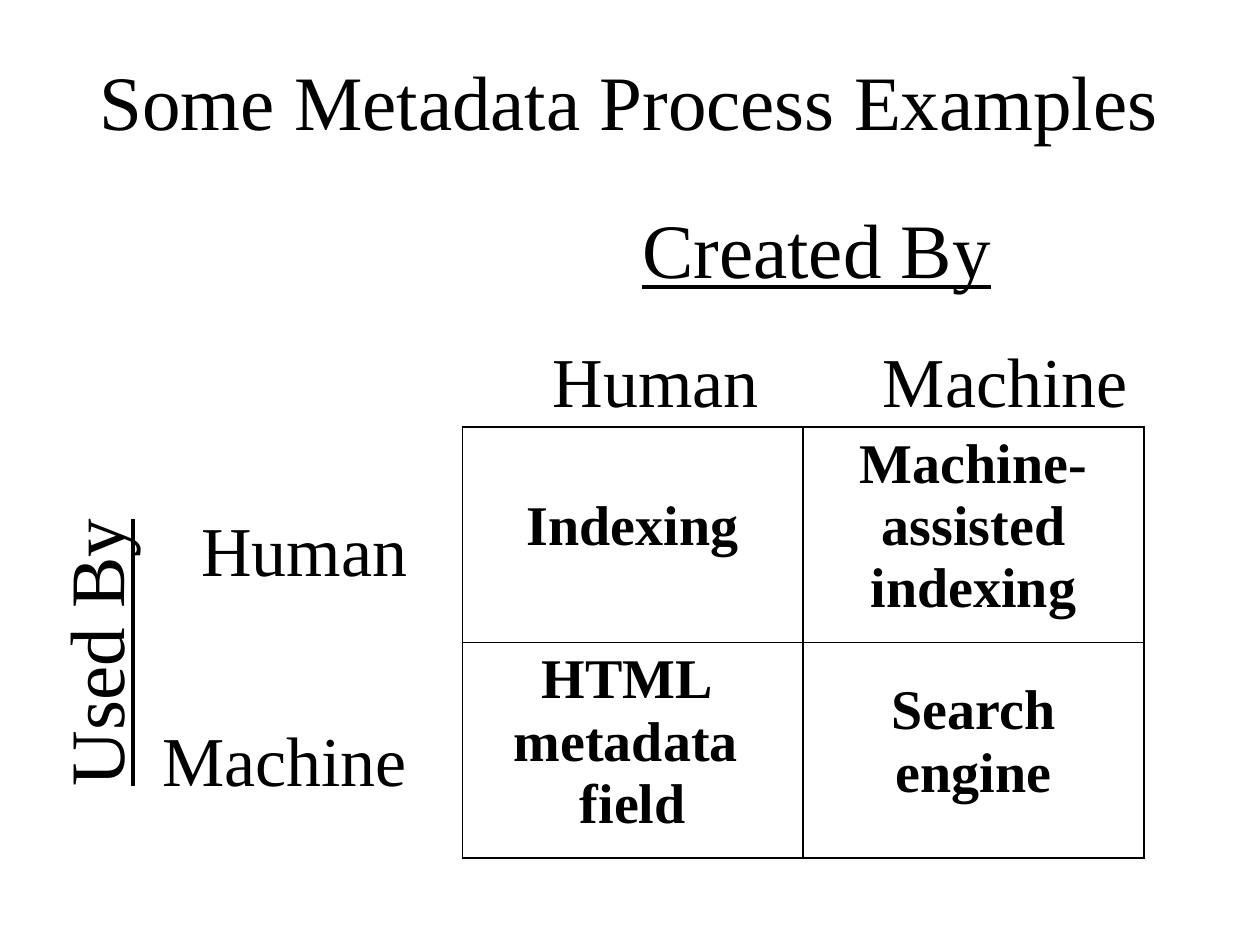
from dataclasses import dataclass

from lxml import etree
from pptx import Presentation
from pptx.dml.color import RGBColor
from pptx.enum.text import MSO_ANCHOR, MSO_AUTO_SIZE, PP_ALIGN
from pptx.oxml.ns import qn
from pptx.util import Emu, Inches, Pt

CENTER, LEFT = PP_ALIGN.CENTER, PP_ALIGN.LEFT
TOP, MIDDLE = MSO_ANCHOR.TOP, MSO_ANCHOR.MIDDLE
FIT_SHAPE = MSO_AUTO_SIZE.SHAPE_TO_FIT_TEXT

SLIDE_WIDTH, SLIDE_HEIGHT = Inches(10), Inches(7.5)
FONT, BLACK, WHITE = "Times New Roman", "000000", "FFFFFF"
HEADING_SIZE, LABEL_SIZE, CELL_SIZE = 44, 40, 32
HEADING_HEIGHT, LABEL_HEIGHT = 11.2, 10.27
HUMAN_WIDTH, MACHINE_WIDTH = 18.5, 21.7
COLUMN_LABEL_TOP = 35.07
MATRIX_LEFT, MATRIX_TOP = 36.7, 45.2
COLUMN_WIDTH, ROW_HEIGHT = 27.05, 22.8
BORDER_WIDTH = Pt(1)


@dataclass(frozen=True)
class Label:
    """Text with its place in percent of the slide's width and height."""
    text: str
    left: float
    top: float
    width: float
    height: float = LABEL_HEIGHT
    size: int = LABEL_SIZE
    underline: bool = False
    rotation: int = 0


@dataclass(frozen=True)
class Example:
    """Paragraphs of a matrix cell, starting some lines below its top."""
    lines: tuple[str, ...]
    lines_down: float = 0


TITLE = Label("Some Metadata Process Examples", 5.8, 2.27, 88.3, 16.67, HEADING_SIZE)
AXIS_LABELS = (
    Label("Created By", 50, 20.67, 29.9, HEADING_HEIGHT, HEADING_SIZE, True),
    Label("Used By", -4.2, 63.33, 23.4, HEADING_HEIGHT, HEADING_SIZE, True, 270),
    Label("Human", 42.9, COLUMN_LABEL_TOP, HUMAN_WIDTH),
    Label("Machine", 69.1, COLUMN_LABEL_TOP, MACHINE_WIDTH),
    Label("Human", 15, 52.93, HUMAN_WIDTH),
    Label("Machine", 11.9, 75.2, MACHINE_WIDTH),
)
EXAMPLES = (
    (Example(("Indexing",), 1), Example(("Machine-assisted indexing",))),
    (Example(("HTML ", "metadata ", "field")), Example(("Search engine",), 0.5)),
)


def across(percent: float) -> Emu:
    return Emu(round(SLIDE_WIDTH * percent / 100))


def down(percent: float) -> Emu:
    return Emu(round(SLIDE_HEIGHT * percent / 100))


def color(value: str) -> RGBColor:
    return RGBColor.from_string(value)


def style(paragraph, size: int, alignment, bold=False, underline=False) -> None:
    paragraph.alignment = alignment
    font = paragraph.font
    font.name, font.size = FONT, Pt(size)
    font.bold, font.underline = bold, underline
    font.color.rgb = color(BLACK)


def add_label(slide, label: Label, alignment=LEFT, anchor=TOP, wrap=False) -> None:
    box = slide.shapes.add_textbox(across(label.left), down(label.top),
                                   across(label.width), down(label.height))
    box.rotation = label.rotation
    frame = box.text_frame
    frame.word_wrap = wrap
    frame.vertical_anchor = anchor
    if not wrap:
        frame.auto_size = FIT_SHAPE
    frame.text = label.text
    style(frame.paragraphs[0], label.size, alignment, underline=label.underline)


def add_borders(cell) -> None:
    properties = cell._tc.get_or_add_tcPr()
    for side in ("a:lnL", "a:lnR", "a:lnT", "a:lnB"):
        line = etree.SubElement(properties, qn(side), w=str(BORDER_WIDTH))
        fill = etree.SubElement(line, qn("a:solidFill"))
        etree.SubElement(fill, qn("a:srgbClr"), val=BLACK)


def fill_cell(cell, example: Example) -> None:
    add_borders(cell)
    cell.fill.solid()
    cell.fill.fore_color.rgb = color(WHITE)
    cell.margin_top = Inches(0.05) + Pt(CELL_SIZE * 1.11 * example.lines_down)
    cell.text = "\n".join(example.lines)
    for paragraph in cell.text_frame.paragraphs:
        style(paragraph, CELL_SIZE, CENTER, bold=True)


def add_matrix(slide) -> None:
    row_count, column_count = len(EXAMPLES), len(EXAMPLES[0])
    table = slide.shapes.add_table(
        row_count, column_count, across(MATRIX_LEFT), down(MATRIX_TOP),
        across(COLUMN_WIDTH * column_count), down(ROW_HEIGHT * row_count)).table
    table.first_row = table.horz_banding = False
    for row, examples in enumerate(EXAMPLES):
        for column, example in enumerate(examples):
            fill_cell(table.cell(row, column), example)


def main() -> None:
    presentation = Presentation()
    presentation.slide_width, presentation.slide_height = SLIDE_WIDTH, SLIDE_HEIGHT
    slide = presentation.slides.add_slide(presentation.slide_layouts[6])
    add_label(slide, TITLE, CENTER, MIDDLE, wrap=True)
    add_matrix(slide)
    for label in AXIS_LABELS:
        add_label(slide, label)
    presentation.save("out.pptx")


if __name__ == "__main__":
    main()
